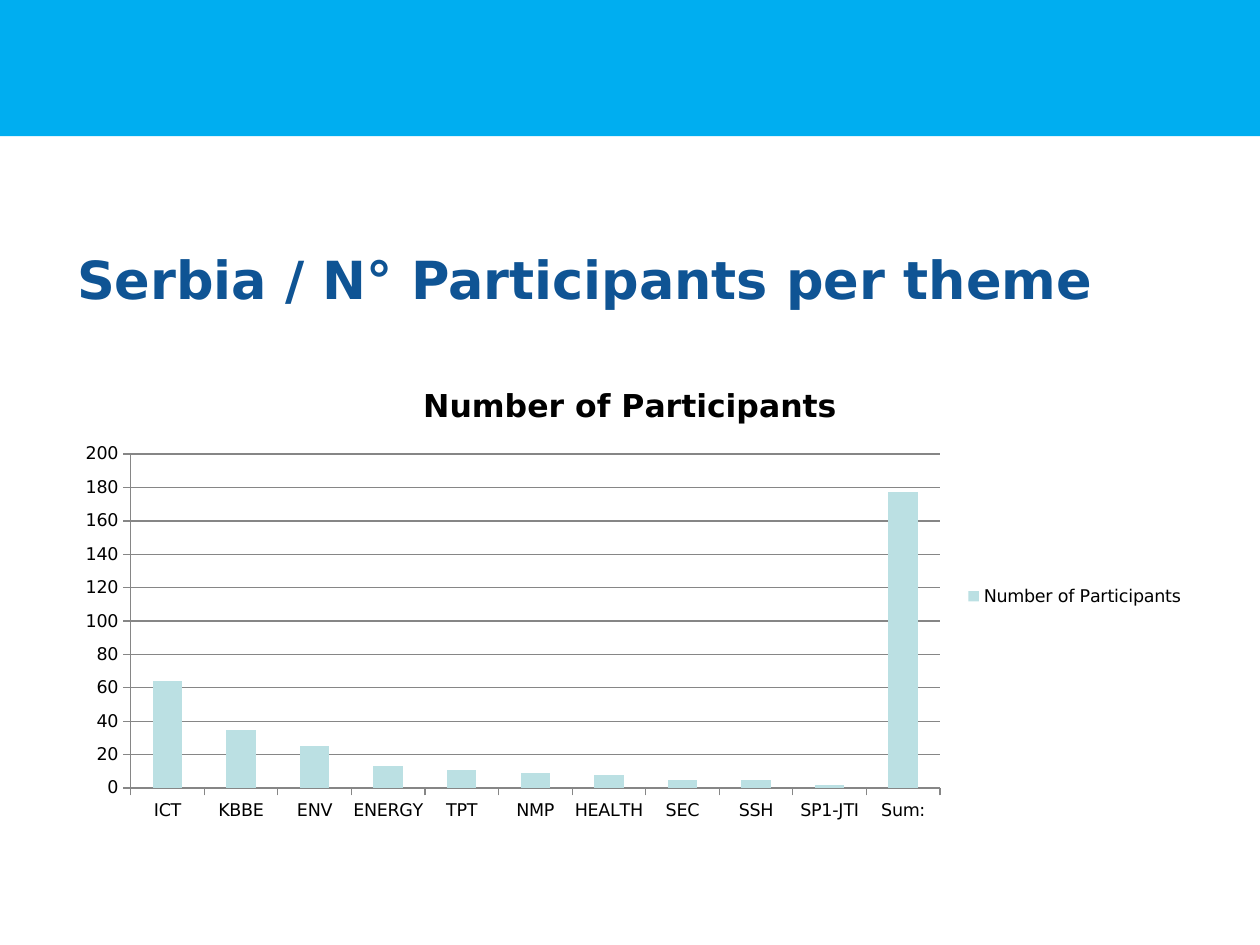
from pptx import Presentation
from pptx.chart.data import CategoryChartData
from pptx.dml.color import RGBColor
from pptx.enum.chart import XL_CHART_TYPE, XL_LEGEND_POSITION, XL_TICK_MARK
from pptx.enum.shapes import MSO_SHAPE
from pptx.enum.text import MSO_ANCHOR, PP_ALIGN
from pptx.util import Pt

RECTANGLE = MSO_SHAPE.RECTANGLE
COLUMN_CLUSTERED = XL_CHART_TYPE.COLUMN_CLUSTERED
LEGEND_RIGHT = XL_LEGEND_POSITION.RIGHT
TICK_OUTSIDE = XL_TICK_MARK.OUTSIDE
TICK_NONE = XL_TICK_MARK.NONE
MIDDLE = MSO_ANCHOR.MIDDLE
LEFT = PP_ALIGN.LEFT

FONT = "DejaVu Sans"
SKY = RGBColor(0x00, 0xAE, 0xF0)
NAVY = RGBColor(0x0F, 0x54, 0x94)
BLACK = RGBColor(0x00, 0x00, 0x00)
GREY = RGBColor(0x86, 0x86, 0x86)
PALE_TEAL = RGBColor(0xBB, 0xE0, 0xE3)

SERIES_NAME = "Number of Participants"
PARTICIPANTS = {
    "ICT": 64, "KBBE": 35, "ENV": 25, "ENERGY": 13, "TPT": 11, "NMP": 9,
    "HEALTH": 8, "SEC": 5, "SSH": 5, "SP1-JTI": 2, "Sum:": 177,
}


def format_font(font, size, color=BLACK, bold=False):
    font.name = FONT
    font.size = Pt(size)
    font.bold = bold
    font.color.rgb = color


def write_text(text_frame, text, **style):
    paragraph = text_frame.paragraphs[0]
    run = paragraph.add_run()
    run.text = text
    format_font(run.font, **style)
    return paragraph


def add_banner(slide, left, top, width, height):
    shape = slide.shapes.add_shape(RECTANGLE, Pt(left), Pt(top), Pt(width), Pt(height))
    shape.shadow.inherit = False
    shape.fill.solid()
    shape.fill.fore_color.rgb = SKY
    shape.line.fill.background()


def add_title(slide, left, top, width, height):
    shape = slide.shapes.add_textbox(Pt(left), Pt(top), Pt(width), Pt(height))
    text_frame = shape.text_frame
    text_frame.word_wrap = True
    text_frame.vertical_anchor = MIDDLE
    paragraph = write_text(text_frame, "Serbia / N° Participants per theme",
                           size=30, color=NAVY, bold=True)
    paragraph.alignment = LEFT


def format_axis(axis):
    axis.major_tick_mark = TICK_OUTSIDE
    axis.minor_tick_mark = TICK_NONE
    axis.format.line.color.rgb = GREY
    axis.format.line.width = Pt(0.75)


def add_participants_chart(slide, left, top, width, height):
    data = CategoryChartData(number_format="#,##0")
    data.categories = list(PARTICIPANTS)
    data.add_series(SERIES_NAME, list(PARTICIPANTS.values()))
    chart = slide.shapes.add_chart(
        COLUMN_CLUSTERED, Pt(left), Pt(top), Pt(width), Pt(height), data).chart
    format_font(chart.font, size=10)

    chart.has_title = True
    write_text(chart.chart_title.text_frame, SERIES_NAME, size=18, bold=True)
    chart.chart_title.include_in_layout = False

    chart.has_legend = True
    chart.legend.position = LEGEND_RIGHT
    chart.legend.include_in_layout = False

    plot = chart.plots[0]
    plot.gap_width = 150
    plot.vary_by_categories = False
    series = plot.series[0]
    series.format.fill.solid()
    series.format.fill.fore_color.rgb = PALE_TEAL

    format_axis(chart.category_axis)
    value_axis = chart.value_axis
    format_axis(value_axis)
    value_axis.minimum_scale = 0
    value_axis.maximum_scale = 200
    value_axis.major_unit = 20
    value_axis.has_major_gridlines = True
    value_axis.major_gridlines.format.line.color.rgb = GREY
    value_axis.major_gridlines.format.line.width = Pt(0.75)
    value_axis.tick_labels.number_format = "#,##0"
    value_axis.tick_labels.number_format_is_linked = False


def main():
    presentation = Presentation()
    presentation.slide_width = Pt(720)
    presentation.slide_height = Pt(540)
    slide = presentation.slides.add_slide(presentation.slide_layouts[6])
    add_banner(slide, 0, 0, 720, 77.75)
    add_title(slide, 37, 122.5, 648, 73.5)
    add_participants_chart(slide, 36, 207.5, 648, 266.5)
    presentation.save("out.pptx")


if __name__ == "__main__":
    main()
